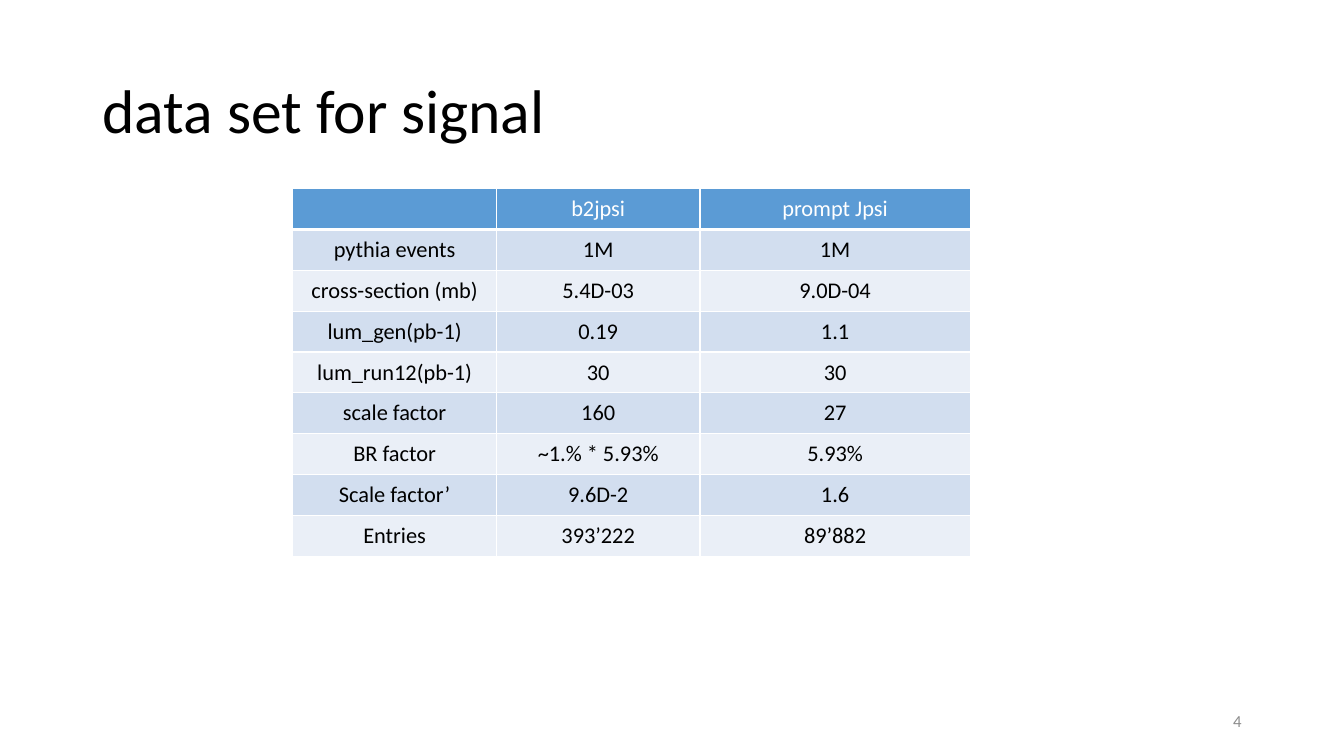
import pptx
import pptx.dml.color
import pptx.enum.text
import pptx.util
from lxml import etree
from pptx.oxml.ns import qn

Cm, Pt = pptx.util.Cm, pptx.util.Pt
ALIGN = pptx.enum.text.PP_ALIGN
MIDDLE = pptx.enum.text.MSO_ANCHOR.MIDDLE

SIGNAL_DATA = [
    ["", "b2jpsi", "prompt Jpsi"],
    ["pythia events", "1M", "1M"],
    ["cross-section (mb)", "5.4D-03", "9.0D-04"],
    ["lum_gen(pb-1)", "0.19", "1.1"],
    ["lum_run12(pb-1)", "30", "30"],
    ["scale factor", "160", "27"],
    ["BR factor", "~1.% * 5.93%", "5.93%"],
    ["Scale factor’", "9.6D-2", "1.6"],
    ["Entries", "393’222", "89’882"],
]


def color(hex_code):
    return pptx.dml.color.RGBColor.from_string(hex_code)


def apply(target, values):
    for key, value in values.items():
        setattr(target, key, value)


class SlideBuilder:
    font_name = "Calibri"
    header_fill = "5B9BD5"
    band_fills = ("EAEFF7", "D2DEEF")
    border_color = "FFFFFF"

    def __init__(self, slide):
        self.slide = slide

    def add_text(self, frame, text, size, text_color, align):
        paragraph = frame.paragraphs[0]
        paragraph.alignment = align
        run = paragraph.add_run()
        run.text = text
        apply(run.font, {"name": self.font_name, "size": Pt(size), "bold": False})
        run.font.color.rgb = color(text_color)
        return paragraph

    def title(self, text, left, top, width, height):
        heading = self.slide.shapes.title
        apply(heading, {"left": Cm(left), "top": Cm(top),
                        "width": Cm(width), "height": Cm(height)})
        heading.text_frame.vertical_anchor = MIDDLE
        self.add_text(heading.text_frame, text, 44, "000000", ALIGN.LEFT).line_spacing = 0.9

    def page_number(self, text, left, top, width, height):
        number = self.slide.shapes.add_textbox(Cm(left), Cm(top), Cm(width), Cm(height))
        apply(number.text_frame, {"word_wrap": True, "vertical_anchor": MIDDLE})
        self.add_text(number.text_frame, text, 12, "8C8C8C", ALIGN.RIGHT)

    def borders(self, cell, bottom_width):
        properties = cell._tc.get_or_add_tcPr()
        for side, width in {"L": 1, "R": 1, "T": 1, "B": bottom_width}.items():
            line = etree.SubElement(properties, qn(f"a:ln{side}"), w=str(Pt(width)))
            fill = etree.SubElement(line, qn("a:solidFill"))
            etree.SubElement(fill, qn("a:srgbClr"), val=self.border_color)

    def table(self, rows, left, top, column_widths, row_height):
        table = self.slide.shapes.add_table(
            len(rows), len(column_widths), Cm(left), Cm(top),
            Cm(sum(column_widths)), Cm(row_height * len(rows))).table
        for column, width in zip(table.columns, column_widths):
            column.width = Cm(width)
        for r, values in enumerate(rows):
            is_header = r == 0
            for c, value in enumerate(values):
                cell = table.cell(r, c)
                cell.vertical_anchor = MIDDLE
                self.borders(cell, 3 if is_header else 1)
                cell.fill.solid()
                cell.fill.fore_color.rgb = color(
                    self.header_fill if is_header else self.band_fills[r % 2])
                self.add_text(cell.text_frame, value, 16,
                              "FFFFFF" if is_header else "000000", ALIGN.CENTER)


def main():
    deck = pptx.Presentation()
    apply(deck, {"slide_width": Cm(33.87), "slide_height": Cm(19.05)})
    builder = SlideBuilder(deck.slides.add_slide(deck.slide_layouts[5]))
    builder.title("data set for signal", 2.33, 1.01, 29.21, 3.68)
    builder.table(SIGNAL_DATA, 7.38, 4.75, [5.13, 5.13, 6.81], 1.03)
    builder.page_number("4", 23.92, 17.66, 7.62, 1.01)
    deck.save("out.pptx")


if __name__ == "__main__":
    main()
